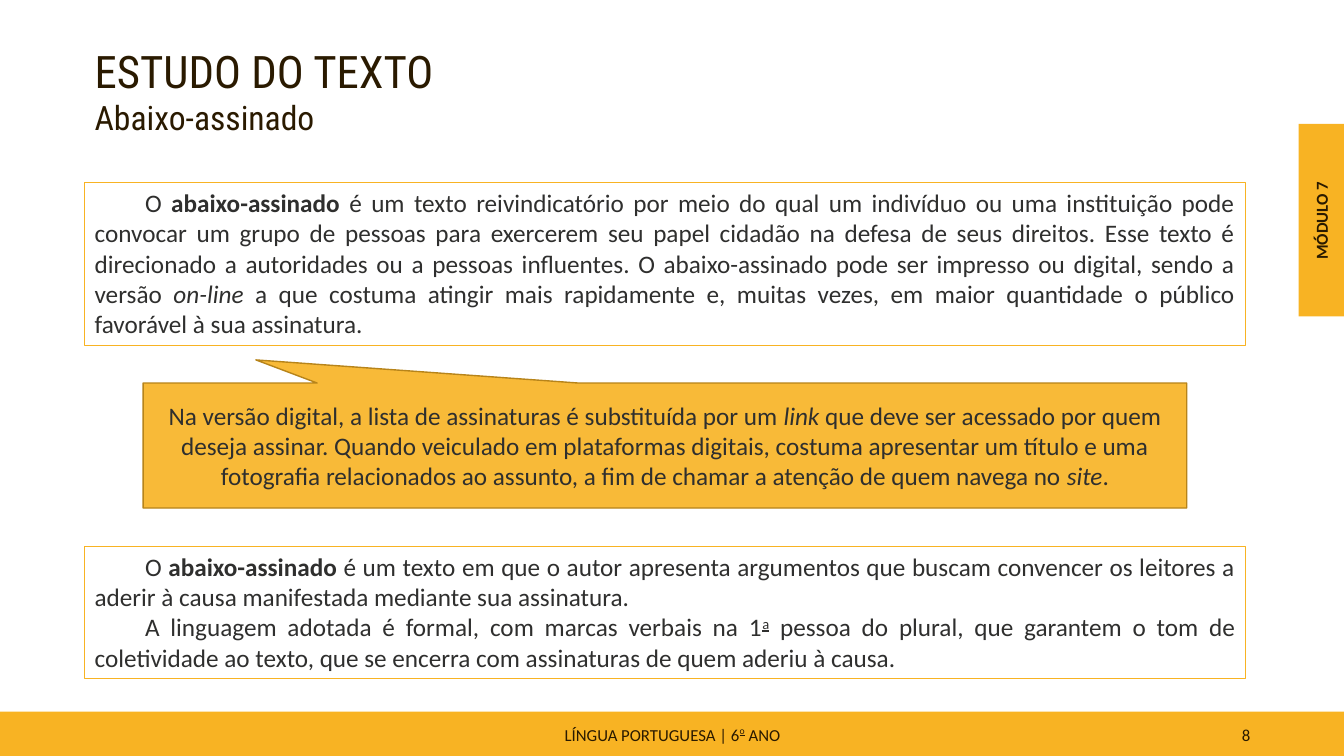
from pptx import Presentation
from pptx.dml.color import RGBColor
from pptx.enum.shapes import MSO_SHAPE as Shape
from pptx.enum.text import MSO_ANCHOR as Anchor, PP_ALIGN as Align
from pptx.oxml.ns import qn
from pptx.util import Inches, Pt
from lxml.etree import SubElement

COLORS = {"amber": "F8B323", "ochre": "B7841A", "brown": "2A1A00", "gray": "2F2F2E"}
BOLD = {"bold": True}
ITALIC = {"italic": True}


def color(name):
    return RGBColor.from_string(COLORS[name])


def ordinal(percent):
    return {"underline": True, "raised": percent}


def write_paragraphs(frame, paragraphs, size=18, ink="gray", font="Calibri",
                     align=Align.LEFT, indent=0, after=0):
    """Each paragraph is a list of (text, style) runs."""
    frame.word_wrap = True
    for index, runs in enumerate(paragraphs):
        paragraph = frame.add_paragraph() if index else frame.paragraphs[0]
        paragraph.alignment = align
        paragraph.space_after = Pt(after)
        if indent:
            properties = paragraph._p.get_or_add_pPr()
            properties.set("marL", "0")
            properties.set("indent", str(Inches(indent)))
        for text, style in runs:
            run = paragraph.add_run()
            run.text = text
            run.font.name = font
            run.font.size = Pt(style.get("size", size))
            run.font.color.rgb = color(ink)
            run.font.bold = style.get("bold", False)
            run.font.italic = style.get("italic", False)
            run.font.underline = style.get("underline", False)
            if "raised" in style:
                run._r.get_or_add_rPr().set("baseline", str(style["raised"] * 1000))


def add_block(slide, box, fill=None, line=None, width=0.75, kind=Shape.RECTANGLE):
    block = slide.shapes.add_shape(kind, *map(Inches, box))
    block.shadow.inherit = False
    if fill:
        block.fill.solid()
        block.fill.fore_color.rgb = color(fill)
    else:
        block.fill.background()
    if line:
        block.line.color.rgb = color(line)
        block.line.width = Pt(width)
    else:
        block.line.fill.background()
    return block


def add_label(slide, box, paragraphs, anchor=Anchor.TOP, rotation=0, **text):
    label = slide.shapes.add_textbox(*map(Inches, box))
    label.rotation = rotation
    label.text_frame.vertical_anchor = anchor
    write_paragraphs(label.text_frame, paragraphs, ink="brown", **text)


def add_definition(slide, top, height, paragraphs):
    definition = add_block(slide, (0.84, top, 11.51, height), line="amber")
    definition.text_frame.vertical_anchor = Anchor.TOP
    write_paragraphs(definition.text_frame, paragraphs, align=Align.JUSTIFY, indent=0.5)


def add_callout(slide, box, tip, runs):
    callout = add_block(slide, box, "amber", "ochre", 1, Shape.RECTANGULAR_CALLOUT)
    callout.adjustments[0], callout.adjustments[1] = tip
    fill = callout._element.spPr.find(qn("a:solidFill"))
    SubElement(fill[0], qn("a:alpha")).set("val", "90000")
    callout.text_frame.vertical_anchor = Anchor.MIDDLE
    write_paragraphs(callout.text_frame, [runs], align=Align.CENTER)


def main():
    deck = Presentation()
    deck.slide_width, deck.slide_height = Inches(13.33), Inches(7.5)
    slide = deck.slides.add_slide(deck.slide_layouts[6])

    # Footer
    add_block(slide, (0, 7.06, 13.33, 0.45), fill="amber")
    add_label(slide, (4.42, 7.1, 4.5, 0.38),
              [[("LÍNGUA PORTUGUESA | 6", {}), ("o", ordinal(45)), (" ANO", {})]],
              Anchor.MIDDLE, size=12, align=Align.CENTER, after=6)
    add_label(slide, (9.42, 7.1, 3.08, 0.38), [[("8", {})]],
              Anchor.MIDDLE, size=12, align=Align.RIGHT, after=6)

    # Module tab
    add_block(slide, (12.88, 1.23, 0.45, 1.91), fill="amber")
    add_label(slide, (12.15, 2.04, 1.91, 0.3), [[("MÓDULO 7", BOLD)]],
              rotation=270, size=12, align=Align.CENTER)

    # Heading
    add_label(slide, (0.84, 0.38, 4.62, 1.04),
              [[("ESTUDO DO TEXTO", {"size": 32})], [("Abaixo-assinado", {"size": 24})]],
              font="Roboto Condensed")

    # Definitions
    add_definition(slide, 1.81, 1.62, [[
        ("O ", {}), ("abaixo-assinado", BOLD),
        (" é um texto reivindicatório por meio do qual um indivíduo ou uma instituição "
         "pode convocar um grupo de pessoas para exercerem seu papel cidadão na defesa de "
         "seus direitos. Esse texto é direcionado a autoridades ou a pessoas influentes. "
         "O abaixo-assinado pode ser impresso ou digital, sendo a versão ", {}),
        ("on-line", ITALIC),
        (" a que costuma atingir mais rapidamente e, muitas vezes, em maior quantidade "
         "o público favorável à sua assinatura.", {})]])
    add_definition(slide, 5.42, 1.31, [
        [("O ", {}), ("abaixo-assinado", BOLD),
         (" é um texto em que o autor apresenta argumentos que buscam convencer os "
          "leitores a aderir à causa manifestada mediante sua assinatura.", {})],
        [("A linguagem adotada é formal, com marcas verbais na 1", {}), ("a", ordinal(30)),
         (" pessoa do plural, que garantem o tom de coletividade ao texto, que se "
          "encerra com assinaturas de quem aderiu à causa. ", {})]])

    # Note on the digital version
    add_callout(slide, (1.42, 3.8, 10.35, 1.24), (-0.392, -0.685), [
        ("Na versão digital, a lista de assinaturas é substituída por um ", {}),
        ("link", ITALIC),
        (" que deve ser acessado por quem deseja assinar. Quando veiculado em plataformas "
         "digitais, costuma apresentar um título e uma fotografia relacionados ao assunto, "
         "a fim de chamar a atenção de quem navega no ", {}),
        ("site", ITALIC), (".", {})])

    deck.save("out.pptx")


if __name__ == "__main__":
    main()
